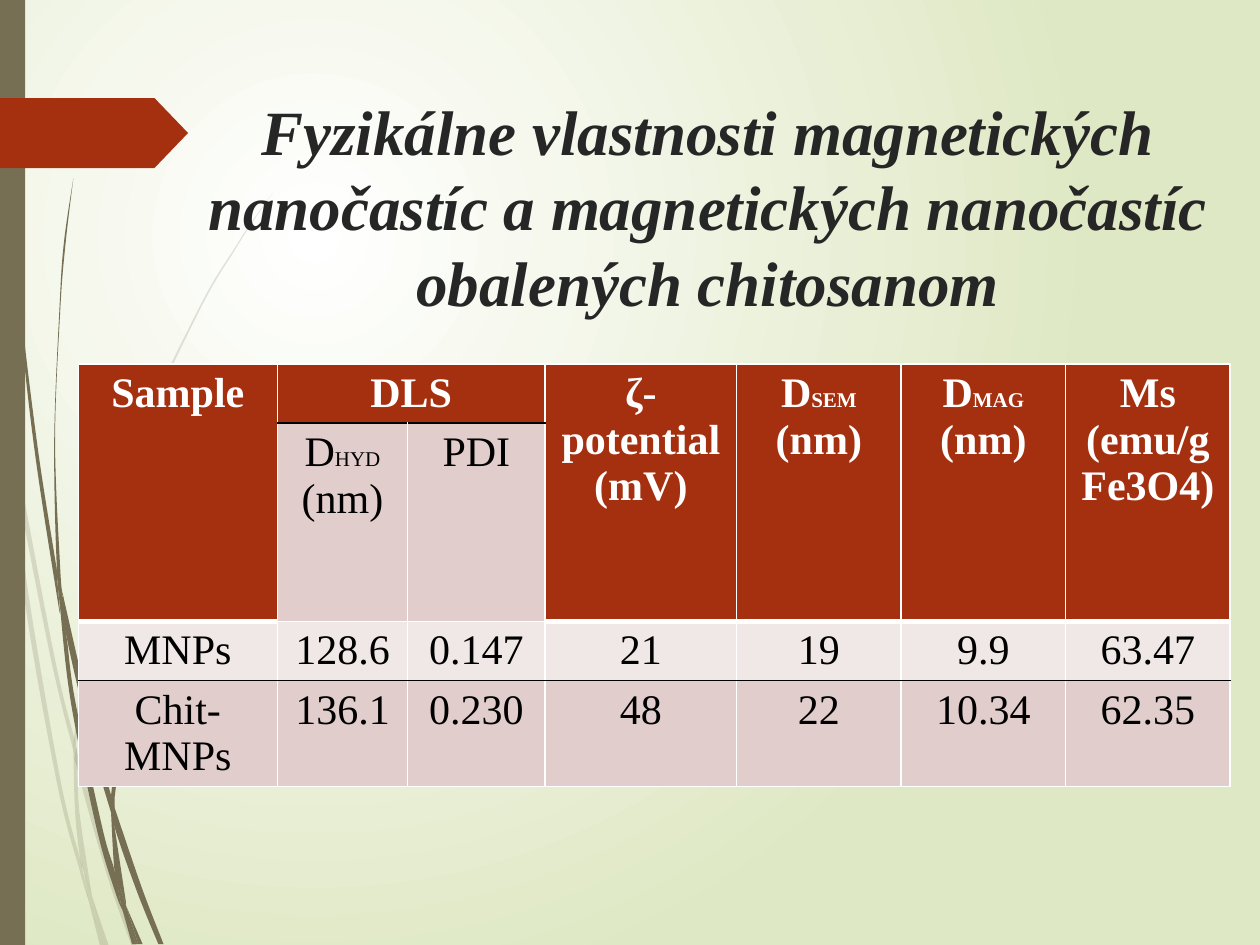
import pptx
import pptx.util
import pptx.dml.color
import pptx.enum.shapes
import pptx.enum.text
import pptx.oxml
import pptx.oxml.ns
import lxml.etree

Pt = pptx.util.Pt
qn = pptx.oxml.ns.qn
CENTER = pptx.enum.text.PP_ALIGN.CENTER
SHAPE = pptx.enum.shapes.MSO_SHAPE
FONT = "Times New Roman"
OLIVE, RUST, WHITE, BLACK = "766F54", "A53010", "FFFFFF", "000000"
ROSE, BLUSH = "E1CDCC", "F0E8E7"

# Each blade of grass has two edges, each a run of points.
PALE = [
    ([(5.5, 252), (4.5, 232), (0, 203)], [(0, 215), (5, 248)]),
    ([(7, 248.5), (8.5, 270.5), (29, 376), (42.5, 431)], [(42.5, 422), (31, 374.5), (7, 248.5)]),
    ([(44, 429), (44, 439), (61, 499.5), (75, 540)], [(78, 540), (63.5, 498), (46, 437), (44, 429)]),
    ([(52.5, 512), (60, 540)], [(62, 540), (52.5, 512)]),
    ([(6, 252), (13.5, 338.5), (32.5, 447), (46, 499), (50.5, 514)],
     [(49.5, 509), (46, 492), (34.5, 445.5), (16, 337.5), (8.5, 270.5), (6, 252)]),
    ([(42, 431.5), (43, 465), (46, 492), (48, 498), (52.5, 512)],
     [(52, 508.5), (45.5, 465), (44, 439), (42, 431.5)]),
    ([(156, 110), (144.5, 126), (134, 142), (114, 175.5), (79, 250.5), (54, 332), (42.5, 420.5), (42.5, 422)],
     [(44, 429), (44, 420.5), (54.5, 332.5), (80, 251.5), (114.5, 176.5), (134.5, 142.5), (145, 126), (156, 110)]),
    ([(50.5, 514), (57, 540)], [(59, 540), (50.5, 514)]),
    ([(42.5, 422), (42, 431.5), (44, 438)], [(44, 439), (44, 429), (42.5, 422)]),
    ([(47, 492), (49.5, 509), (50.5, 514), (59, 540)], [(60, 540), (52.5, 512), (48, 498), (47, 492)]),
]
DARK = [
    ([(1.5, 0), (2, 34.5), (3.5, 79), (10, 168), (19.5, 255.5), (33, 343.5), (34, 346.5)],
     [(32.5, 329), (32.5, 326), (21.5, 255.5), (11, 167), (4.5, 78.5), (3, 34.5), (2, 0)]),
    ([(36, 340), (38, 363.5), (52.5, 426), (63.5, 464.5)], [(63.5, 456), (63.5, 454.5), (55.5, 425), (36, 340)]),
    ([(65.5, 461.5), (65.5, 472.5), (78.5, 510), (90.5, 539.5)],
     [(93.5, 539.5), (81.5, 508.5), (67.5, 467.5), (65.5, 461.5)]),
    ([(34, 343.5), (40.5, 401), (55.5, 474.5), (66, 510), (70, 520)],
     [(69, 516), (65.5, 497.5), (58.5, 473), (43, 400.5), (38, 363.5), (34, 343.5)]),
    ([(42, 101.5), (36.5, 139), (34, 176.5), (31, 251.5), (32.5, 323.5), (35.5, 340)],
     [(36, 340), (34.5, 326), (31.5, 251.5), (34.5, 176.5), (37.5, 139), (42, 101.5)]),
    ([(72, 517.5), (79, 539.5)], [(81.5, 539.5), (72, 517.5)]),
    ([(32.5, 323.5), (32.5, 326), (34, 343.5), (38, 363.5)], [(36, 340), (35.5, 340), (32.5, 323.5)]),
    ([(155.5, 247.5), (146, 258), (137.5, 268.5), (121, 291.5), (93, 341.5), (72.5, 396.5), (63.5, 454.5), (65.5, 461.5)],
     [(65.5, 456), (74, 397.5), (94.5, 342.5), (121.5, 292.5), (137.5, 269.5), (146, 258.5), (155.5, 247.5)]),
    ([(70, 520), (75.5, 539.5)], [(78, 539.5), (70, 520)]),
    ([(63.5, 464.5), (65.5, 497.5), (69, 508.5), (72, 517.5)], [(72, 515.5), (65.5, 472.5), (65, 468.5), (63.5, 464.5)]),
    ([(63.5, 454.5), (63.5, 464.5), (65.5, 472.5)], [(65.5, 461.5), (63.5, 454.5)]),
    ([(65.5, 497.5), (69, 516), (70, 520), (78, 539.5)], [(79, 539.5), (72, 517.5), (69, 508.5), (65.5, 497.5)]),
]

COLS = [113.75, 74.5, 78.5, 109.5, 94, 94, 94]
ROWS = [33.75, 113.25, 34, 60.5]
# A cell is text, or a list of (text, size) runs.
CELLS = [
    ["Sample", "DLS", None, "ζ-potential (mV)", [("D", 24), ("SEM", 12), (" (nm)", 24)],
     [("D", 24), ("MAG ", 12), ("(nm)", 24)], "Ms (emu/gFe3O4)"],
    [None, [("D", 24), ("HYD", 12), (" (nm)", 24)], "PDI", None, None, None, None],
    ["MNPs", "128.6", "0.147", "21", "19", "9.9", "63.47"],
    ["Chit-MNPs", "136.1", "0.230", "48", "22", "10.34", "62.35"],
]


def rgb(code):
    return pptx.dml.color.RGBColor.from_string(code)


def paint(shape, code, alpha=100):
    shape.shadow.inherit = False
    shape.fill.solid()
    shape.fill.fore_color.rgb = rgb(code)
    shape.line.fill.background()
    if alpha < 100:
        tint = shape._element.spPr.find(".//" + qn("a:srgbClr"))
        lxml.etree.SubElement(tint, qn("a:alpha"), val=str(alpha * 1000))


def bend(shape, edges):
    """Turn the straight parts of both edges into cubic curves."""
    left, top = shape.left, shape.top
    lines = iter(shape._element.findall(".//" + qn("a:lnTo")))
    for n, edge in enumerate(edges):
        if n:
            next(lines)  # the straight step across the tip
        ext = [edge[0], *edge, edge[-1]]
        for p, q, r, s in zip(ext, ext[1:], ext[2:], ext[3:]):
            line = next(lines)
            line.tag = qn("a:cubicBezTo")
            pulls = [[b + (c - a) / 6 for a, b, c in zip(p, q, r)],
                     [c - (d - b) / 6 for b, c, d in zip(q, r, s)]]
            for i, (x, y) in enumerate(pulls):
                dot = line.makeelement(qn("a:pt"), {"x": str(Pt(x) - left), "y": str(Pt(y) - top)})
                line.insert(i, dot)


def grass(slide, blades, alpha):
    for edges in blades:
        dots = [(Pt(x), Pt(y)) for edge in edges for x, y in edge]
        form = slide.shapes.build_freeform(*dots[0])
        form.add_line_segments(dots[1:], close=True)
        blade = form.convert_to_shape()
        paint(blade, OLIVE, alpha)
        bend(blade, edges)


def block(slide, kind, box, code):
    shape = slide.shapes.add_shape(kind, *map(Pt, box))
    paint(shape, code)
    return shape


def backdrop(slide):
    fill = slide.background.fill
    fill.gradient()
    for stop, code in zip(fill.gradient_stops, (WHITE, "DFE8C4")):
        stop.color.rgb = rgb(code)
    grad = slide._element.find(".//" + qn("a:gradFill"))
    grad.remove(grad.find(qn("a:lin")))
    way = lxml.etree.SubElement(grad, qn("a:path"), path="circle")
    lxml.etree.SubElement(way, qn("a:fillToRect"), l="50000", t="50000", r="100000", b="100000")


def style(font, size, code, bold):
    font.name, font.size, font.bold = FONT, Pt(size), bold
    font.color.rgb = rgb(code)


def heading(slide, box, text):
    title = slide.shapes.title
    title.left, title.top, title.width, title.height = map(Pt, box)
    slide.shapes._spTree.append(title._element)
    frame = title.text_frame
    frame.text = text
    frame.word_wrap = True
    frame.auto_size = pptx.enum.text.MSO_AUTO_SIZE.NONE
    frame.vertical_anchor = pptx.enum.text.MSO_ANCHOR.TOP
    par = frame.paragraphs[0]
    par.alignment = CENTER
    style(par.font, 36, "262626", True)
    par.font.italic = True


def border(cell, side, code, width=1):
    line = lxml.etree.SubElement(cell._tc.get_or_add_tcPr(), qn("a:ln" + side), w=str(Pt(width)))
    fill = lxml.etree.SubElement(line, qn("a:solidFill"))
    lxml.etree.SubElement(fill, qn("a:srgbClr"), val=code)


def write(cell, text, code, bold):
    par = cell.text_frame.paragraphs[0]
    if isinstance(text, str):
        par.text = text
    else:
        for part, size in text:
            run = par.add_run()
            run.text, run.font.size = part, Pt(size)
    par.alignment = CENTER
    style(par.font, 24, code, bold)


def results(slide, box):
    table = slide.shapes.add_table(len(ROWS), len(COLS), *map(Pt, box)).table
    table.horz_banding = False
    for col, width in zip(table.columns, COLS):
        col.width = Pt(width)
    for row, height in zip(table.rows, ROWS):
        row.height = Pt(height)
    for c in (0, 3, 4, 5, 6):
        table.cell(0, c).merge(table.cell(1, c))
    table.cell(0, 1).merge(table.cell(0, 2))
    for r, texts in enumerate(CELLS):
        for c, text in enumerate(texts):
            cell = table.cell(r, c)
            sub = c in (1, 2)
            head = r == 0 or r == 1 and not sub
            over = r == 3 or r == 1 and sub
            under = r == 2 or r == 0 and sub
            border(cell, "L", WHITE)
            border(cell, "R", WHITE)
            border(cell, "T", BLACK if over else WHITE, 3 if r == 2 and not sub else 1)
            border(cell, "B", BLACK if under else WHITE, 3 if head and not sub else 1)
            cell.fill.solid()
            cell.fill.fore_color.rgb = rgb(RUST if head else BLUSH if r == 2 else ROSE)
            if text:
                write(cell, text, WHITE if head else BLACK, head)


def main():
    deck = pptx.Presentation()
    deck.slide_width, deck.slide_height = Pt(720), Pt(540)
    slide = deck.slides.add_slide(deck.slide_layouts[5])
    backdrop(slide)
    grass(slide, PALE, 20)
    grass(slide, DARK, 100)
    block(slide, SHAPE.RECTANGLE, (0, 0, 14.4, 540), OLIVE)
    block(slide, SHAPE.PENTAGON, (0, 56, 107.5, 40), RUST).adjustments[0] = 0.48
    heading(slide, (106.5, 49, 596, 101),
            "Fyzikálne vlastnosti magnetických nanočastíc a magnetických nanočastíc obalených chitosanom")
    results(slide, (44.75, 208, sum(COLS), sum(ROWS)))
    deck.save("out.pptx")


if __name__ == "__main__":
    main()
